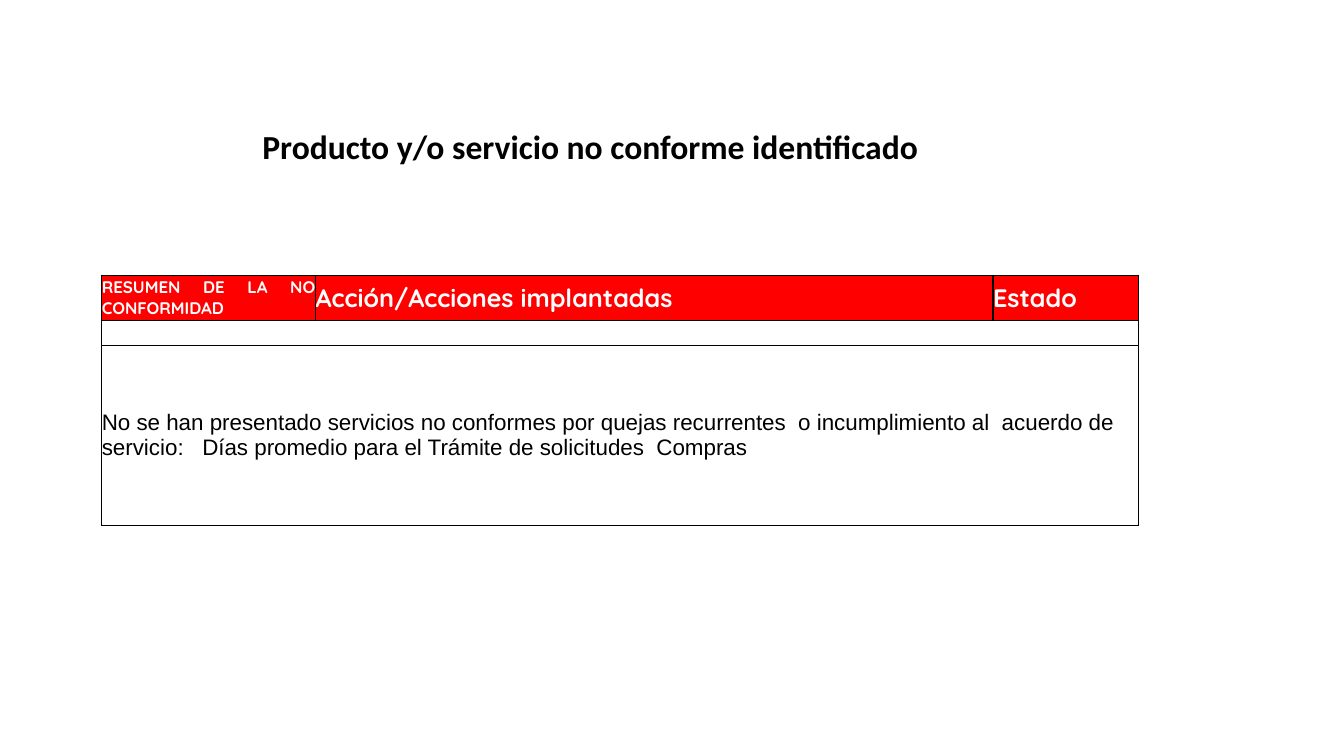
from dataclasses import dataclass

from lxml.etree import SubElement
from pptx import Presentation
from pptx.dml.color import RGBColor
from pptx.enum.text import MSO_ANCHOR as Anchor, PP_ALIGN as Align
from pptx.oxml.ns import qn
from pptx.slide import Slide
from pptx.table import _Cell as Cell
from pptx.text.text import _Paragraph as Paragraph
from pptx.util import Inches, Pt

COLORS = {"text": "000000", "header": "FF0000", "header_text": "FFFFFF", "border": "000000"}
COLUMN_WIDTHS = (2.12, 6.72, 1.44)
ROW_HEIGHTS = (0.45, 0.25, 1.78)


@dataclass(frozen=True)
class CellText:
    row: int
    column: int
    text: str
    size: int
    font: str = "Quicksand"
    color: str = "header_text"
    bold: bool = True
    align: Align = Align.JUSTIFY


CELL_TEXTS = (
    CellText(0, 0, "RESUMEN DE LA NO CONFORMIDAD", 12),
    CellText(0, 1, "Acción/Acciones implantadas ", 18),
    CellText(0, 2, "Estado", 18),
    CellText(
        2, 0,
        "No se han presentado servicios no conformes por quejas recurrentes  o incumplimiento al  "
        "acuerdo de servicio:   Días promedio para el Trámite de solicitudes  Compras",
        16, "Arial", "text", False, Align.LEFT,
    ),
)


def format_runs(paragraph: Paragraph, font: str, size: int, color: str, bold: bool) -> None:
    for run in paragraph.runs:
        run.font.name = font
        run.font.size = Pt(size)
        run.font.bold = bold
        run.font.color.rgb = RGBColor.from_string(COLORS[color])


def add_title(slide: Slide) -> None:
    title = slide.shapes.title
    title.left, title.top = Inches(0.5), Inches(0.45)
    title.width, title.height = Inches(10.71), Inches(1.25)
    frame = title.text_frame
    frame.text = "Producto y/o servicio no conforme identificado"
    frame.vertical_anchor = Anchor.BOTTOM
    paragraph = frame.paragraphs[0]
    paragraph.alignment = Align.CENTER
    paragraph.line_spacing = 0.9
    format_runs(paragraph, "Calibri", 24, "text", True)


def style_cell(cell: Cell, is_header: bool) -> None:
    cell.margin_left = cell.margin_right = cell.margin_top = cell.margin_bottom = 0
    cell.vertical_anchor = Anchor.MIDDLE
    properties = cell._tc.get_or_add_tcPr()
    for side in ("a:lnL", "a:lnR", "a:lnT", "a:lnB"):
        line = SubElement(properties, qn(side), w=str(Pt(1)))
        fill = SubElement(line, qn("a:solidFill"))
        SubElement(fill, qn("a:srgbClr"), val=COLORS["border"])
    if is_header:
        cell.fill.solid()
        cell.fill.fore_color.rgb = RGBColor.from_string(COLORS["header"])
    else:
        cell.fill.background()


def add_summary_table(slide: Slide) -> None:
    frame = slide.shapes.add_table(
        len(ROW_HEIGHTS), len(COLUMN_WIDTHS), Inches(1.01), Inches(2.73),
        Inches(sum(COLUMN_WIDTHS)), Inches(sum(ROW_HEIGHTS)),
    )
    table = frame.table
    table.horz_banding = False
    for column, width in zip(table.columns, COLUMN_WIDTHS):
        column.width = Inches(width)
    for index, (row, height) in enumerate(zip(table.rows, ROW_HEIGHTS)):
        row.height = Inches(height)
        for cell in row.cells:
            style_cell(cell, index == 0)
            if index == 1:
                SubElement(cell.text_frame.paragraphs[0]._p, qn("a:endParaRPr"), sz="1200")
        if index > 0:
            table.cell(index, 0).merge(table.cell(index, len(COLUMN_WIDTHS) - 1))
    for item in CELL_TEXTS:
        text_frame = table.cell(item.row, item.column).text_frame
        text_frame.text = item.text
        paragraph = text_frame.paragraphs[0]
        paragraph.alignment = item.align
        format_runs(paragraph, item.font, item.size, item.color, item.bold)


def main() -> None:
    presentation = Presentation()
    presentation.slide_width = Inches(13.33)
    presentation.slide_height = Inches(7.5)
    slide = presentation.slides.add_slide(presentation.slide_layouts[5])
    add_title(slide)
    add_summary_table(slide)
    presentation.save("out.pptx")


if __name__ == "__main__":
    main()
